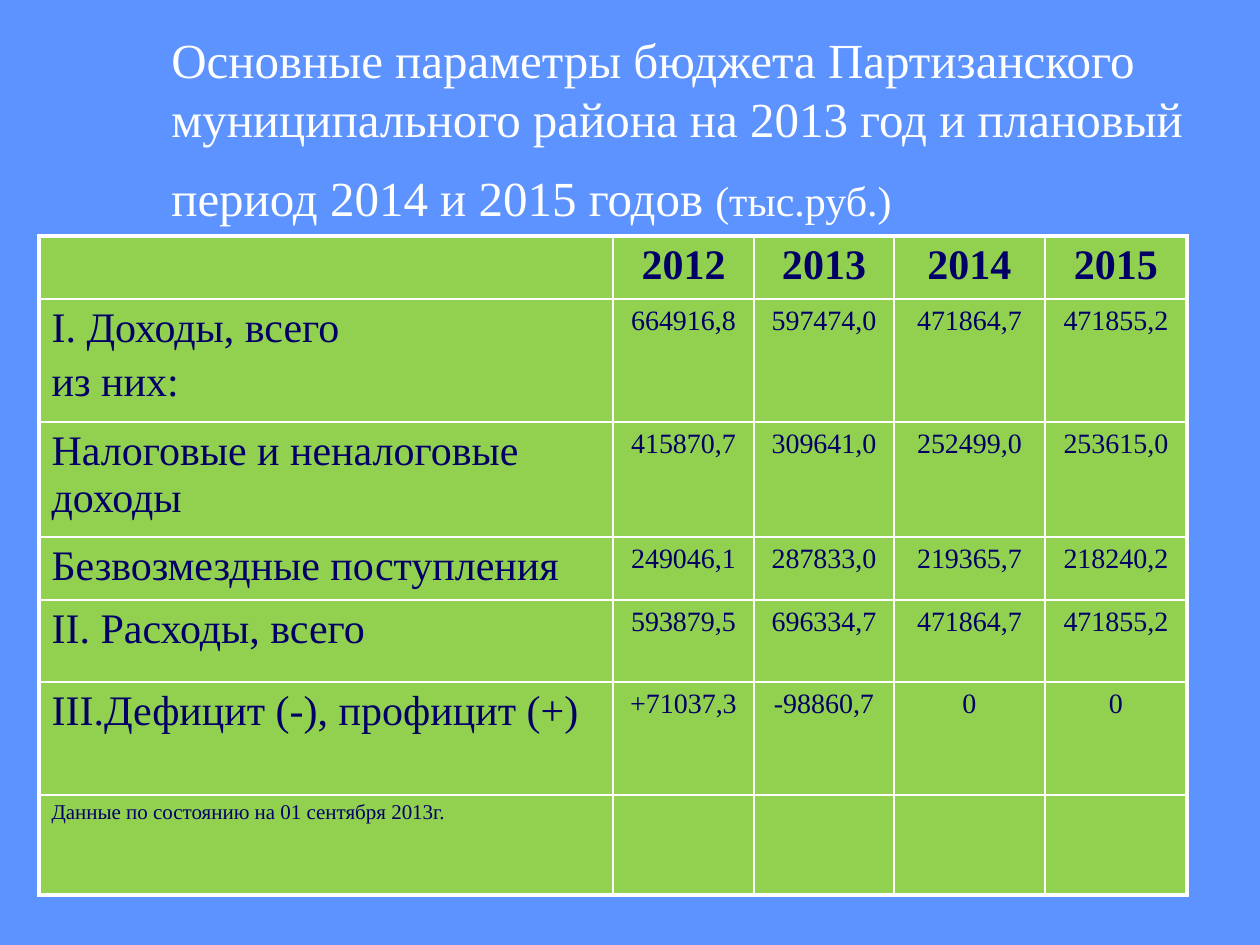
import dataclasses
import typing

import lxml.etree
import pptx
import pptx.dml.color
import pptx.enum.text
import pptx.oxml.ns
import pptx.util

PX = 914400 / 126
CENTER = pptx.enum.text.PP_ALIGN.CENTER
LEFT = pptx.enum.text.PP_ALIGN.LEFT


@dataclasses.dataclass(frozen=True)
class Theme:
    background: str = "5D93FF"
    cell: str = "92D050"
    ink: str = "000066"
    white: str = "FFFFFF"
    font: str = "Times New Roman"
    title_end_font: str = "Cabin"
    title: int = 28
    title_end: int = 40
    label: int = 24
    value: int = 16
    note: int = 12
    inner_line: float = 1
    outer_line: float = 2.25


@dataclasses.dataclass(frozen=True)
class BudgetRow:
    height: int
    label: str
    values: tuple[str, ...] = ("", "", "", "")
    label_size: int = Theme.label
    value_size: int = Theme.value
    bold: bool = False


THEME = Theme()
COLUMNS = (574, 141, 140, 151, 142)
ROWS = (
    BudgetRow(63, "", ("2012", "2013", "2014", "2015"), value_size=THEME.label, bold=True),
    BudgetRow(123, "I. Доходы, всего\nиз них:", ("664916,8", "597474,0", "471864,7", "471855,2")),
    BudgetRow(115, "Налоговые и неналоговые доходы", ("415870,7", "309641,0", "252499,0", "253615,0")),
    BudgetRow(63, "Безвозмездные поступления", ("249046,1", "287833,0", "219365,7", "218240,2")),
    BudgetRow(82, "II. Расходы, всего", ("593879,5", "696334,7", "471864,7", "471855,2")),
    BudgetRow(113, "III.Дефицит (-), профицит (+)", ("+71037,3", "-98860,7", "0", "0")),
    BudgetRow(100, "Данные по состоянию на 01 сентября 2013г.", label_size=THEME.note),
)


def px(n: int) -> int:
    return round(n * PX)


def rgb(color: str) -> pptx.dml.color.RGBColor:
    return pptx.dml.color.RGBColor.from_string(color)


def set_font(font: typing.Any, size: int, color: str, bold: bool = False) -> None:
    font.name = THEME.font
    font.size = pptx.util.Pt(size)
    font.color.rgb = rgb(color)
    font.bold = bold


def add_title(s: typing.Any) -> None:
    sp = s.shapes.add_textbox(px(159), px(29), px(1073), px(202))
    tf = sp.text_frame
    tf.word_wrap = True
    tf.vertical_anchor = pptx.enum.text.MSO_ANCHOR.MIDDLE
    p = tf.paragraphs[0]
    set_font(p.font, THEME.title, THEME.white)
    p.add_run().text = (
        "Основные параметры бюджета Партизанского муниципального района "
        "на 2013 год и плановый период 2014 и 2015 годов "
    )
    r = p.add_run()
    r.text = "(тыс.руб.)"
    r.font.size = pptx.util.Pt(THEME.label)
    r = p.add_run()
    r.text = " "
    r.font.size = pptx.util.Pt(THEME.title_end)
    r.font.name = THEME.title_end_font


def set_borders(cell: typing.Any, outer: dict[str, bool]) -> None:
    tc_pr = cell._tc.get_or_add_tcPr()
    qn = pptx.oxml.ns.qn
    for i, (side, is_outer) in enumerate(outer.items()):
        width = THEME.outer_line if is_outer else THEME.inner_line
        ln = lxml.etree.Element(qn(f"a:ln{side}"), w=str(pptx.util.Pt(width)))
        fill = lxml.etree.SubElement(ln, qn("a:solidFill"))
        lxml.etree.SubElement(fill, qn("a:srgbClr"), val=THEME.white)
        tc_pr.insert(i, ln)


def fill_cell(cell: typing.Any, text: str, size: int, bold: bool, align: typing.Any) -> None:
    cell.fill.solid()
    cell.fill.fore_color.rgb = rgb(THEME.cell)
    tf = cell.text_frame
    tf.text = text
    for i, p in enumerate(tf.paragraphs):
        p.alignment = align
        if i:
            p.space_before = pptx.util.Pt(4)
        set_font(p.font, size, THEME.ink, bold)


def add_budget_table(s: typing.Any) -> None:
    n_rows, n_cols = len(ROWS), len(COLUMNS)
    height = sum(row.height for row in ROWS)
    table = s.shapes.add_table(
        n_rows, n_cols, px(39), px(236), px(sum(COLUMNS)), px(height)
    ).table
    table.first_row = False
    table.horz_banding = False
    for column, width in zip(table.columns, COLUMNS):
        column.width = px(width)
    for i, row in enumerate(ROWS):
        table.rows[i].height = px(row.height)
        for j, text in enumerate((row.label, *row.values)):
            cell = table.cell(i, j)
            size = row.value_size if j else row.label_size
            fill_cell(cell, text, size, row.bold, CENTER if j else LEFT)
            set_borders(cell, {"L": j == 0, "R": j == n_cols - 1, "T": i == 0, "B": i == n_rows - 1})


def main() -> None:
    prs = pptx.Presentation()
    prs.slide_width = px(1260)
    prs.slide_height = px(945)
    s = prs.slides.add_slide(prs.slide_layouts[6])
    s.background.fill.solid()
    s.background.fill.fore_color.rgb = rgb(THEME.background)
    add_title(s)
    add_budget_table(s)
    prs.save("out.pptx")


if __name__ == "__main__":
    main()
